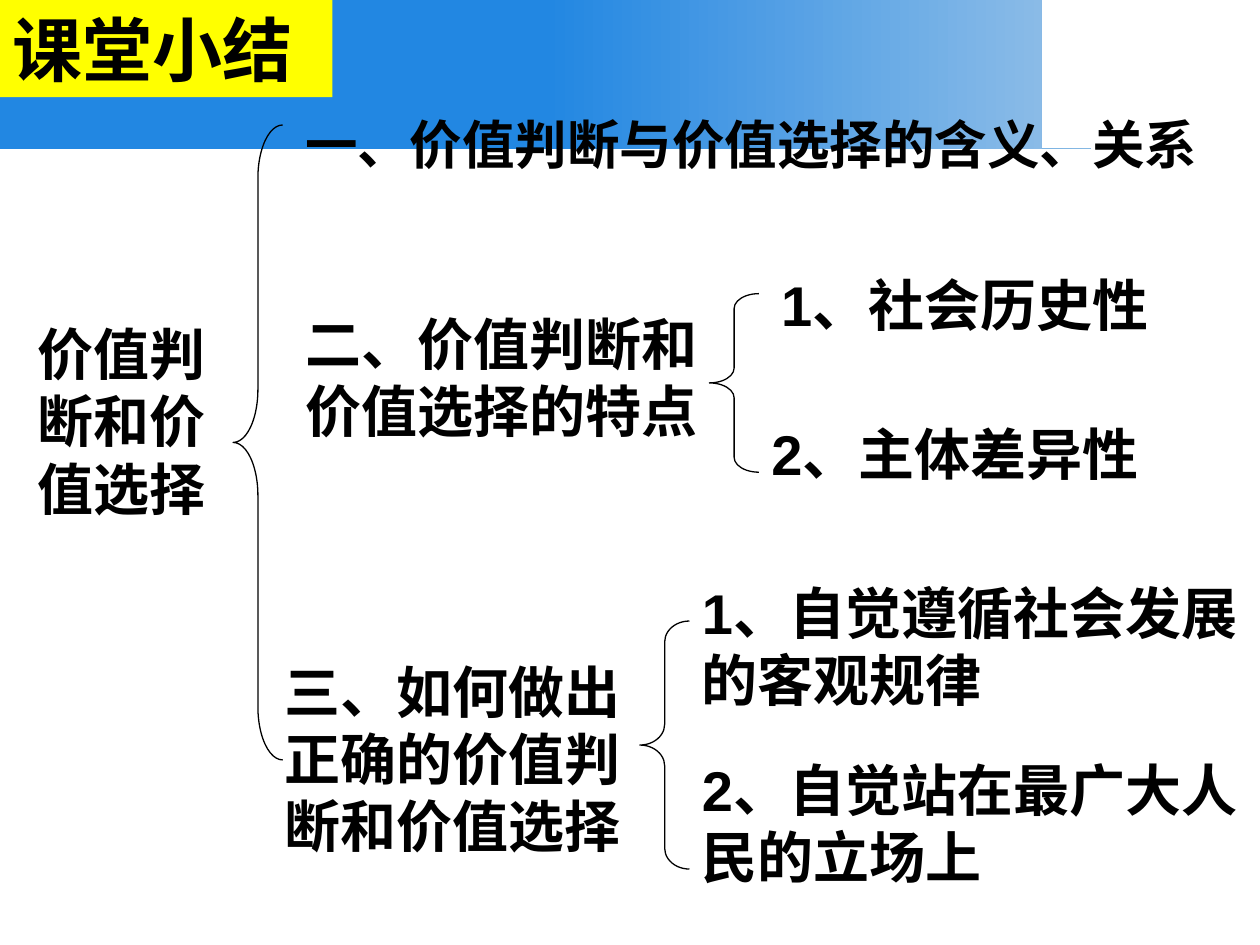
from copy import deepcopy
from dataclasses import dataclass

from pptx import Presentation
from pptx.dml.color import RGBColor
from pptx.enum.shapes import MSO_SHAPE
from pptx.enum.text import MSO_ANCHOR, PP_ALIGN
from pptx.util import Cm, Pt


@dataclass(frozen=True)
class Theme:
    font: str = "Arial"
    ink: str = "000000"
    label: str = "FFFF00"
    band: str = "2287E2"
    band_end: str = "94C0E8"
    title: int = 40
    body: int = 32
    long_line: int = 30
    rule: float = 0.75


def rgb(value):
    return RGBColor.from_string(value)


def bezier(p0, p1, p2, p3, steps=40):
    """Points along a cubic curve, without its start."""
    for i in range(1, steps + 1):
        t = i / steps
        u = 1 - t
        yield tuple(u**3 * a + 3 * u * u * t * b + 3 * u * t * t * c + t**3 * d
                    for a, b, c, d in zip(p0, p1, p2, p3))


class SlideBuilder:
    def __init__(self, slide, theme):
        self.s = slide
        self.theme = theme

    def band(self, width, height, ctrl1, ctrl2):
        """Header band whose right edge is a concave curve."""
        corner, foot = (width, 0), (width, height)
        points = [corner, *bezier(corner, ctrl1, ctrl2, foot), (0, height)]
        fb = self.s.shapes.build_freeform(0, 0, scale=Cm(1))
        fb.add_line_segments(points, close=True)
        sp = fb.convert_to_shape()
        sp.shadow.inherit = False
        sp.line.fill.background()
        sp.fill.gradient()
        sp.fill.gradient_angle = 0
        # Solid up to the middle, then fading
        first = sp.fill.gradient_stops[0]._gs
        first.addnext(deepcopy(first))
        colors = (self.theme.band, self.theme.band, self.theme.band_end)
        for stop, pos, color in zip(sp.fill.gradient_stops, (0, 0.5, 1), colors):
            stop.position = pos
            stop.color.rgb = rgb(color)

    def text(self, words, x, y, w, h, size=None, fill=None):
        sp = self.s.shapes.add_textbox(Cm(x), Cm(y), Cm(w), Cm(h))
        if fill:
            sp.fill.solid()
            sp.fill.fore_color.rgb = rgb(fill)
        tf = sp.text_frame
        tf.word_wrap = True
        tf.vertical_anchor = MSO_ANCHOR.TOP
        p = tf.paragraphs[0]
        p.alignment = PP_ALIGN.LEFT
        r = p.add_run()
        r.text = words
        r.font.name = self.theme.font
        r.font.size = Pt(size or self.theme.body)
        r.font.bold = True
        r.font.color.rgb = rgb(self.theme.ink)

    def brace(self, x, y, h, curl, w=1):
        sp = self.s.shapes.add_shape(MSO_SHAPE.LEFT_BRACE, Cm(x), Cm(y), Cm(w), Cm(h))
        sp.shadow.inherit = False
        sp.adjustments[0] = curl
        sp.adjustments[1] = 0.5
        sp.fill.background()
        sp.line.color.rgb = rgb(self.theme.ink)
        sp.line.width = Pt(self.theme.rule)


def main():
    prs = Presentation()
    prs.slide_width, prs.slide_height = Cm(25.4), Cm(19.05)
    theme = Theme()
    b = SlideBuilder(prs.slides.add_slide(prs.slide_layouts[6]), theme)

    # Header
    b.band(21.82, 2.97, (20.73, 0.74), (20.6, 2.41))
    b.text("课堂小结", 0, 0, 6.7, 1.96, theme.title, theme.label)

    # Topic
    b.text("价值判断和价值选择", 0.51, 6.32, 3.99, 4.32)
    b.brace(4.7, 2.52, 12.8, 1.07)

    # Three main points
    b.text("一、价值判断与价值选择的含义、关系", 5.9, 2.13, 19.5, 1.52, theme.long_line)
    b.text("二、价值判断和价值选择的特点", 5.9, 6.12, 8.81, 2.97)
    b.text("三、如何做出正确的价值判断和价值选择", 5.49, 13.13, 7.59, 4.32)

    # Features under point two
    b.brace(14.3, 5.92, 3.6, 0.3)
    b.text("1、社会历史性", 15.5, 5.33, 8.81, 1.6)
    b.text("2、主体差异性", 15.3, 8.33, 8.81, 1.6)

    # Requirements under point three
    b.brace(12.9, 12.52, 5, 0.42)
    b.text("1、自觉遵循社会发展的客观规律", 13.9, 11.53, 11.5, 2.97)
    b.text("2、自觉站在最广大人民的立场上", 13.9, 15.11, 11.5, 2.97)

    prs.save("out.pptx")


if __name__ == "__main__":
    main()
